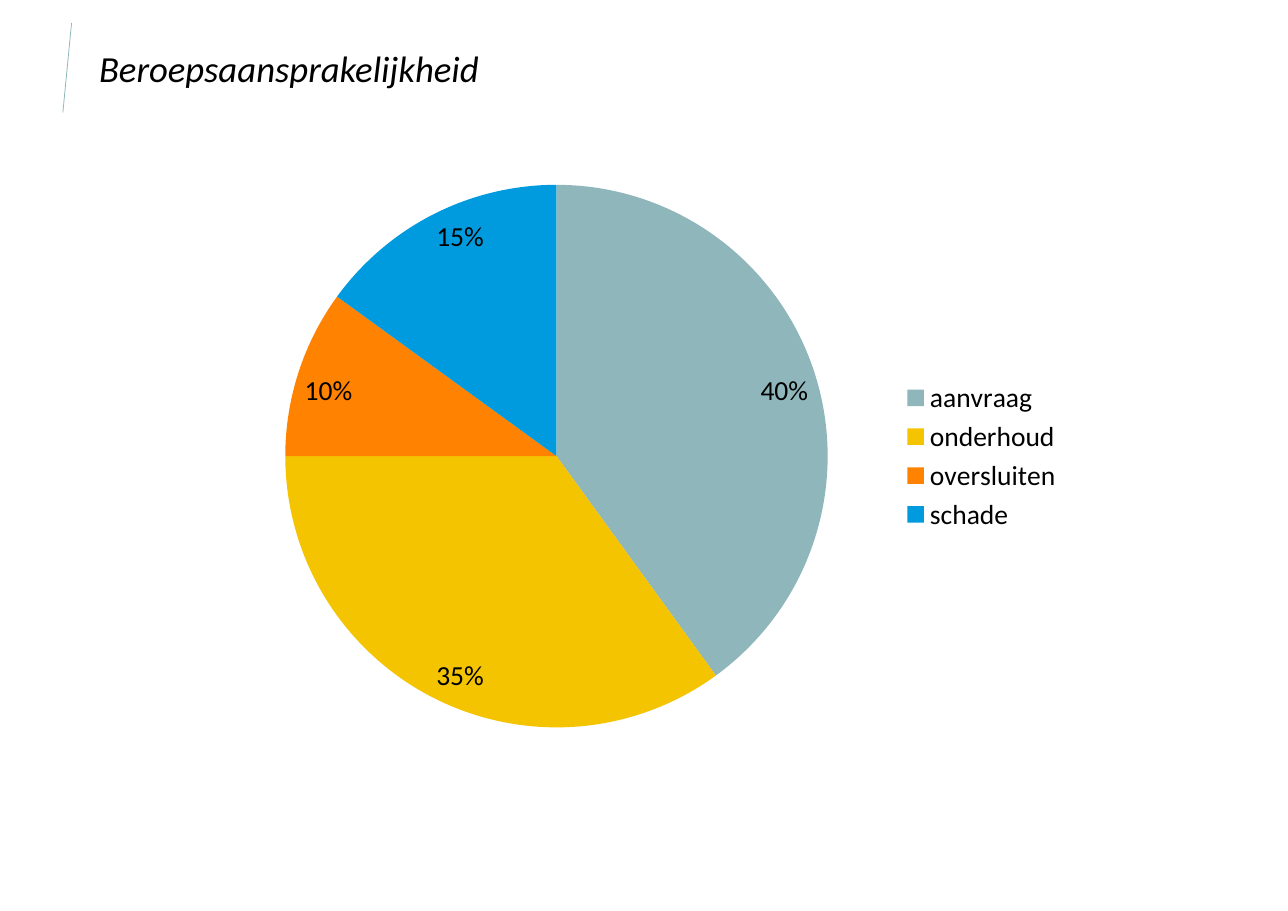
import dataclasses

import pptx
import pptx.chart.data
import pptx.dml.color
import pptx.enum.chart
import pptx.enum.shapes
import pptx.enum.text
import pptx.oxml
import pptx.util
from pptx.util import Cm


@dataclasses.dataclass(frozen=True)
class Theme:
    font: str = "Calibri"
    text: str = "000000"
    accent: str = "8FB6BB"
    slices: tuple = ("8FB6BB", "F5C400", "FF8300", "009BDE")
    title_size: int = 24
    chart_size: int = 18
    line_width: float = 0.5


THEME = Theme()
SHARES = {"aanvraag": 0.4, "onderhoud": 0.35, "oversluiten": 0.1, "schade": 0.15}


def rgb(value):
    return pptx.dml.color.RGBColor.from_string(value)


def set_all(target, values):
    for name, value in values.items():
        setattr(target, name, value)


def format_font(font, size, italic=False):
    set_all(font, {"name": THEME.font, "size": pptx.util.Pt(size),
                   "bold": False, "italic": italic})
    font.color.rgb = rgb(THEME.text)


def add_accent_line(page, start, end):
    line = page.shapes.add_connector(
        pptx.enum.shapes.MSO_CONNECTOR.STRAIGHT, *start, *end)
    line.line.color.rgb = rgb(THEME.accent)
    line.line.width = pptx.util.Pt(THEME.line_width)
    # An empty effect list removes the shadow
    line._element.spPr.append(pptx.oxml.parse_xml(
        '<a:effectLst xmlns:a="http://schemas.openxmlformats.org/drawingml/2006/main"/>'))


def set_title(page, text, place):
    title = page.shapes.title
    set_all(title, place)
    set_all(title.text_frame, {
        "word_wrap": True,
        "auto_size": pptx.enum.text.MSO_AUTO_SIZE.NONE,
        "vertical_anchor": pptx.enum.text.MSO_ANCHOR.MIDDLE})
    para = title.text_frame.paragraphs[0]
    para.alignment = pptx.enum.text.PP_ALIGN.LEFT
    span = para.add_run()
    span.text = text
    format_font(span.font, THEME.title_size, italic=True)


def add_pie(page, shares, place):
    data = pptx.chart.data.CategoryChartData(number_format="0%")
    data.categories = list(shares)
    data.add_series("Series 1", list(shares.values()))
    chart = page.shapes.add_chart(
        pptx.enum.chart.XL_CHART_TYPE.PIE, *place, data).chart
    set_all(chart, {"has_title": False, "has_legend": True})
    format_font(chart.font, THEME.chart_size)

    # Legend
    set_all(chart.legend, {
        "position": pptx.enum.chart.XL_LEGEND_POSITION.RIGHT,
        "include_in_layout": False})
    format_font(chart.legend.font, THEME.chart_size)

    # Slices and their labels
    plot = chart.plots[0]
    set_all(plot, {"vary_by_categories": True, "has_data_labels": True})
    set_all(plot.data_labels, {
        "show_value": True, "show_percentage": False,
        "number_format": "0%", "number_format_is_linked": False,
        "position": pptx.enum.chart.XL_LABEL_POSITION.INSIDE_END})
    format_font(plot.data_labels.font, THEME.chart_size)
    for index, color in enumerate(THEME.slices):
        fill = plot.series[0].points[index].format.fill
        fill.solid()
        fill.fore_color.rgb = rgb(color)


def main():
    deck = pptx.Presentation()
    set_all(deck, {"slide_width": Cm(29.7), "slide_height": Cm(21)})
    page = deck.slides.add_slide(deck.slide_layouts.get_by_name("Title Only"))

    # Heading
    add_accent_line(page, (Cm(1.65), Cm(0.53)), (Cm(1.45), Cm(2.59)))
    set_title(page, "Beroepsaansprakelijkheid", {
        "left": Cm(2.03), "top": Cm(0.53), "width": Cm(25.63), "height": Cm(2.06)})

    # Pie chart
    add_pie(page, SHARES, (Cm(4.95), Cm(3.91), Cm(19.81), Cm(13.21)))

    deck.save("out.pptx")


if __name__ == "__main__":
    main()
